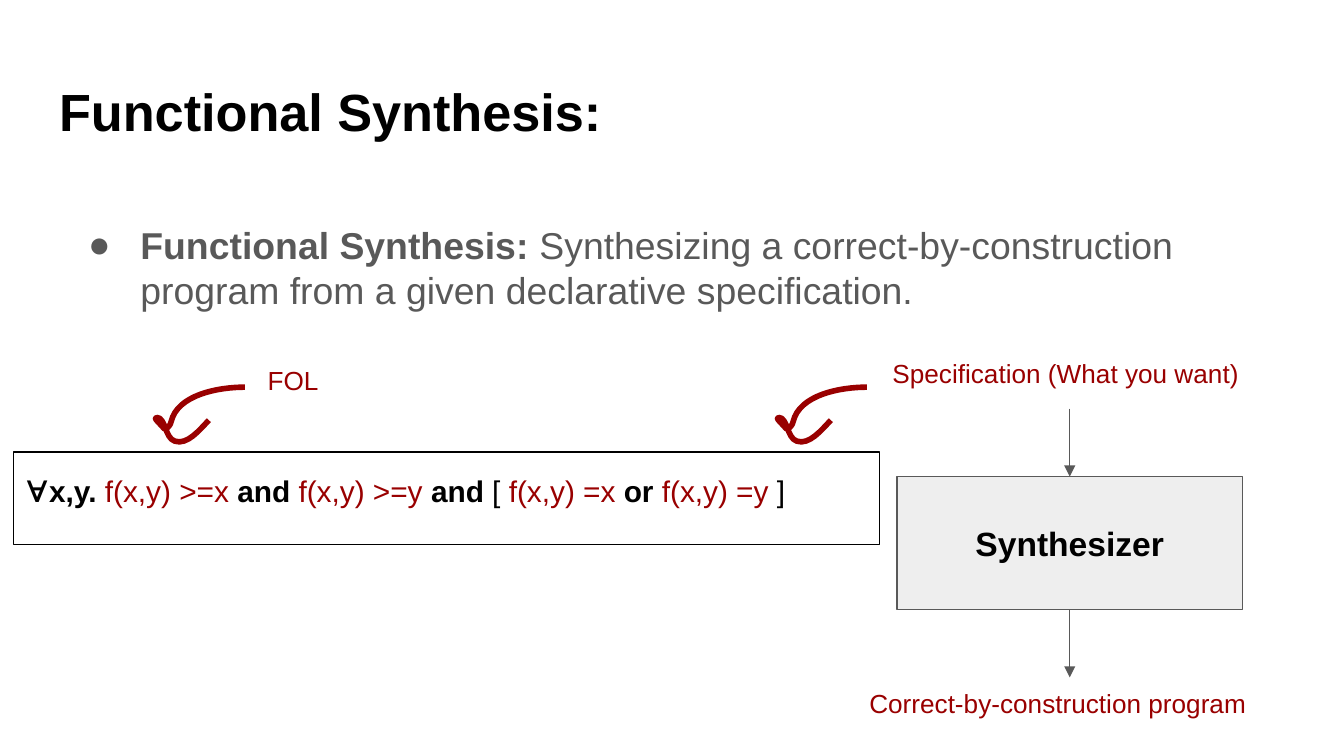
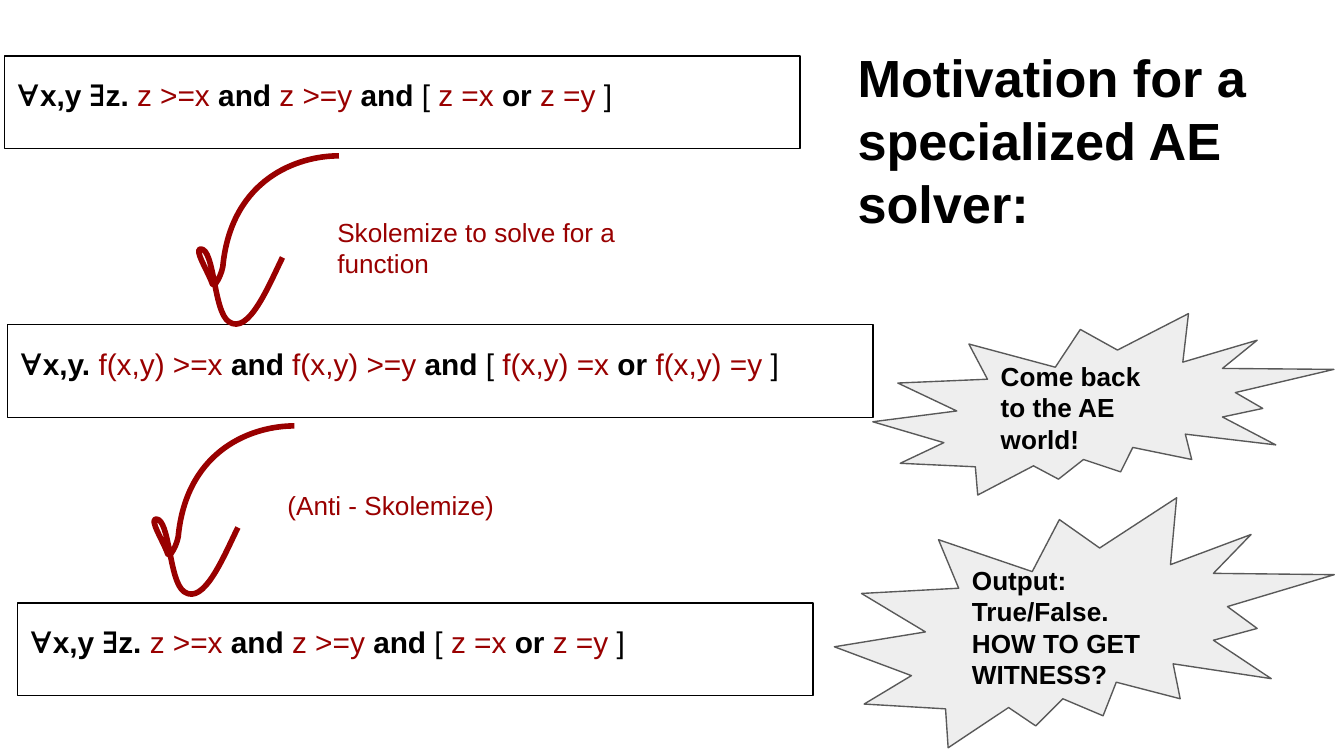
"""Build two slides on functional synthesis and the need for an AE solver."""
import pptx
import pptx.dml.color
import pptx.enum.shapes
import pptx.enum.text
import pptx.oxml
import pptx.oxml.ns
import pptx.util

Pt = pptx.util.Pt
SHAPES = pptx.enum.shapes.MSO_SHAPE
ALIGN = pptx.enum.text.PP_ALIGN
ANCHOR = pptx.enum.text.MSO_ANCHOR

BLACK, RED, GREY, PALE = "000000", "990000", "595959", "EEEEEE"
FRAME = {
    "word_wrap": True,
    "auto_size": pptx.enum.text.MSO_AUTO_SIZE.NONE,
    "margin_left": Pt(7.2),
    "margin_right": Pt(7.2),
    "margin_top": Pt(7.2),
    "margin_bottom": Pt(7.2),
}
HOOK_START = (100, 0)
HOOK_CURVES = [
    [(70, 0), (25, 14), (18, 63)],
    [(18, 69), (11, 80), (10, 75)],
    [(7, 68), (-3, 55), (2, 55)],
    [(12, 55), (11, 92), (22, 98)],
    [(36, 106), (50, 77), (60, 60)],
]


def assign(target, values):
    for name, value in values.items():
        setattr(target, name, value)


def paint(fill, colour):
    if colour is None:
        fill.background()
    else:
        fill.solid()
        fill.fore_color.rgb = pptx.dml.color.RGBColor.from_string(colour)


def outline(line, colour, width):
    paint(line.fill, colour)
    line.width = Pt(width)


def add_xml(parent, content):
    namespace = pptx.oxml.ns.nsdecls("a")
    wrapper = pptx.oxml.parse_xml(f"<a:wrapper {namespace}>{content}</a:wrapper>")
    for child in list(wrapper):
        parent.append(child)


def place(element, box):
    assign(element, dict(zip(("left", "top", "width", "height"), map(Pt, box))))


def write(element, runs, align=ALIGN.LEFT, anchor=ANCHOR.TOP):
    frame = element.text_frame
    assign(frame, {**FRAME, "vertical_anchor": anchor})
    paragraph = frame.paragraphs[0]
    assign(paragraph, {"alignment": align, "space_before": Pt(0)})
    for text, size, colour, bold in runs:
        run = paragraph.add_run()
        run.text = text
        assign(run.font, {"name": "Arial", "size": Pt(size), "bold": bold})
        paint(run.font.fill, colour)
    return paragraph


def set_title(slide, text, box):
    place(slide.shapes.title, box)
    write(slide.shapes.title, [(text, 28, BLACK, True)])


def set_bullet(slide, runs, box):
    body = slide.placeholders[1]
    place(body, box)
    properties = write(body, runs)._p.get_or_add_pPr()
    properties.set("marL", str(Pt(36)))
    properties.set("indent", str(Pt(-28)))
    add_xml(properties, f'<a:buClr><a:srgbClr val="{GREY}"/></a:buClr>'
                        '<a:buFont typeface="Arial"/><a:buChar char="●"/>')


def add_label(slide, text, box):
    label = slide.shapes.add_textbox(*map(Pt, box))
    write(label, [(text, 14, RED, False)])


def add_panel(slide, kind, box, fill, border, runs, **layout):
    panel = slide.shapes.add_shape(kind, *map(Pt, box))
    panel.shadow.inherit = False
    paint(panel.fill, fill)
    outline(panel.line, border, 0.75)
    write(panel, runs, **layout)
    return panel


def add_burst(slide, text, box):
    add_panel(slide, SHAPES.EXPLOSION2, box, PALE, GREY,
              [(text, 14, BLACK, True)], anchor=ANCHOR.MIDDLE)


def add_formula(slide, quantifiers, term, left, top, width):
    runs = [(part, 20 if part in "∀∃" else 16, BLACK, True) for part in quantifiers]
    pieces = [(f"{term} >=x ", RED, False), ("and ", BLACK, True),
              (f"{term} >=y ", RED, False), ("and", BLACK, True),
              (" [ ", BLACK, False), (f"{term} =x ", RED, False),
              ("or ", BLACK, True), (f"{term} =y ", RED, False),
              ("]", BLACK, False)]
    runs += [(text, 16, colour, bold) for text, colour, bold in pieces]
    add_panel(slide, SHAPES.RECTANGLE, (left, top, width, 49.7), None, BLACK, runs)


def add_function_formula(slide, left, top):
    add_formula(slide, ["∀", "x,y. "], "f(x,y)", left, top, 463.7)


def add_witness_formula(slide, left, top):
    add_formula(slide, ["∀", "x,y ", "∃", "z. "], "z", left, top, 426.2)


def point_xml(point):
    return '<a:pt x="{}" y="{}"/>'.format(*point)


def add_hook(slide, left, top, width, height):
    builder = slide.shapes.build_freeform(*HOOK_START)
    builder.add_line_segments([curve[-1] for curve in HOOK_CURVES], close=False)
    hook = builder.convert_to_shape()
    place(hook, (left, top, width, height))
    track = hook._element.find(".//" + pptx.oxml.ns.qn("a:path"))
    for segment in list(track):
        track.remove(segment)
    for side in ("w", "h"):
        track.set(side, "100")
    add_xml(track, f"<a:moveTo>{point_xml(HOOK_START)}</a:moveTo>")
    for curve in HOOK_CURVES:
        add_xml(track, f"<a:cubicBezTo>{''.join(map(point_xml, curve))}</a:cubicBezTo>")
    hook.shadow.inherit = False
    paint(hook.fill, None)
    outline(hook.line, RED, 3)


def add_arrow(slide, x, top, bottom):
    arrow = slide.shapes.add_connector(
        pptx.enum.shapes.MSO_CONNECTOR.STRAIGHT, Pt(x), Pt(top), Pt(x), Pt(bottom))
    outline(arrow.line, GREY, 0.75)
    add_xml(arrow.line._get_or_add_ln(), '<a:tailEnd type="triangle"/>')
    add_xml(arrow._element.spPr, "<a:effectLst/>")
    return arrow


def build_definition(deck):
    slide = deck.slides.add_slide(deck.slide_layouts[1])
    set_title(slide, "Functional Synthesis:", (24.5, 35.3, 671, 45.4))
    set_bullet(slide, [
        ("Functional Synthesis: ", 20, GREY, True),
        ("Synthesizing a correct-by-construction program from a given "
         "declarative specification.", 20, GREY, False),
    ], (32, 111.8, 671, 242))
    synthesizer = add_panel(
        slide, SHAPES.RECTANGLE, (480.6, 255.3, 185, 71.2), PALE, GREY,
        [("Synthesizer", 18, BLACK, True)], align=ALIGN.CENTER, anchor=ANCHOR.MIDDLE)
    add_arrow(slide, 573.1, 218.9, 255.3).end_connect(synthesizer, 0)
    add_arrow(slide, 573.1, 326.5, 362.9).begin_connect(synthesizer, 2)
    add_label(slide, "Specification (What you want)", (471, 184.3, 204.5, 36))
    add_label(slide, "Correct-by-construction program", (458.6, 361.2, 229, 36))
    add_function_formula(slide, 7.4, 242.2)
    for left in (416.2, 83):
        add_hook(slide, left, 207.4, 48.2, 29.5)
    add_label(slide, "FOL", (136.3, 187.9, 48.2, 36))


def build_motivation(deck):
    slide = deck.slides.add_slide(deck.slide_layouts[5])
    set_title(slide, "Motivation for a specialized AE solver:", (452.2, 17.3, 243.4, 45.4))
    add_burst(slide, "Come back to the AE world!", (467.6, 168, 247, 97.2))
    add_function_formula(slide, 4, 173.9)
    add_witness_formula(slide, 9.3, 323)
    add_hook(slide, 82.1, 228.2, 75.6, 90.7)
    add_label(slide, "(Anti - Skolemize)", (146.9, 254.9, 137.5, 36))
    add_burst(slide, "Output: True/False. HOW TO GET WITNESS?", (447, 266.7, 267.8, 133.9))
    add_witness_formula(slide, 2.5, 30)
    add_hook(slide, 106, 83.5, 75.6, 90.7)
    add_label(slide, "Skolemize to solve for a function", (173.6, 108.7, 215.3, 36))


def main():
    deck = pptx.Presentation()
    assign(deck, {"slide_width": Pt(720), "slide_height": Pt(405)})
    build_definition(deck)
    build_motivation(deck)
    deck.save("out.pptx")


if __name__ == "__main__":
    main()
